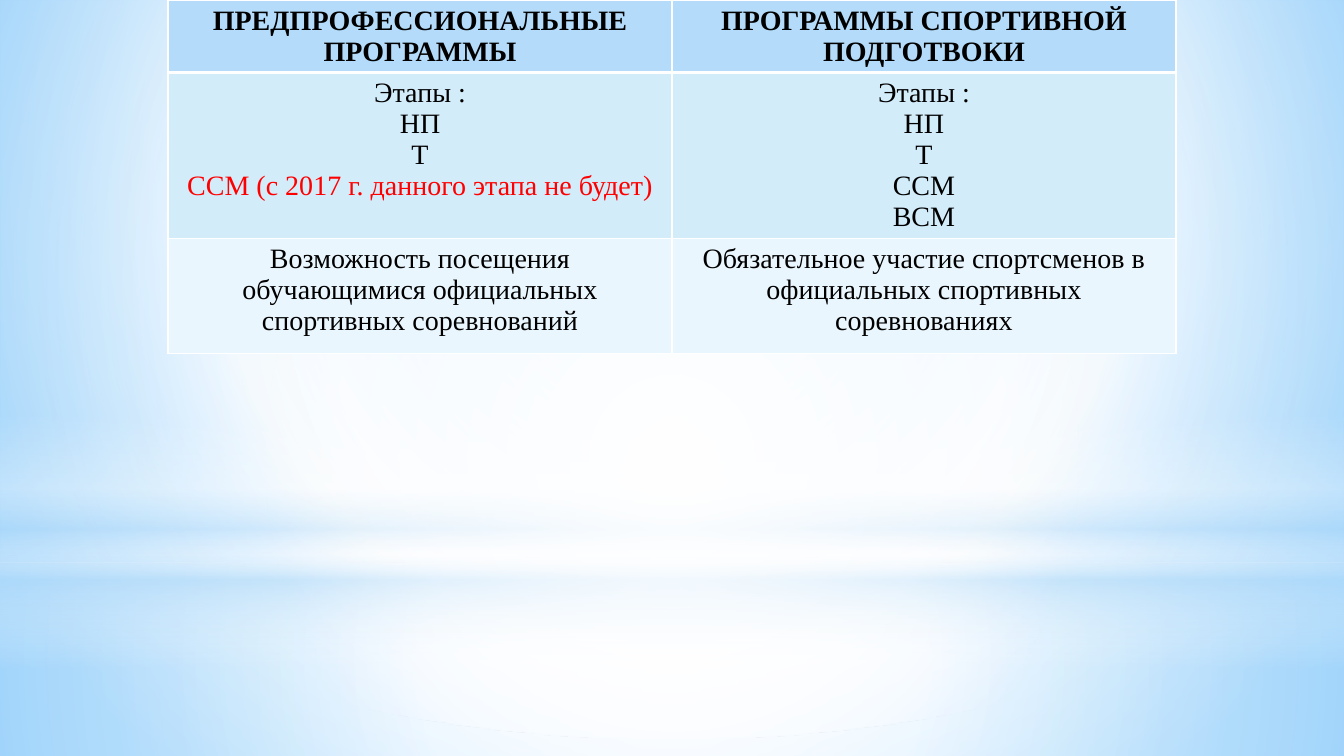
import pptx
import pptx.util
import pptx.dml.color
import pptx.enum.shapes
import pptx.enum.text
import pptx.oxml
import pptx.oxml.ns
from lxml import etree

Cm, Pt = pptx.util.Cm, pptx.util.Pt
RGBColor = pptx.dml.color.RGBColor
SHAPE = pptx.enum.shapes.MSO_SHAPE
qn = pptx.oxml.ns.qn

BLACK = RGBColor(0x00, 0x00, 0x00)
RED = RGBColor(0xFF, 0x00, 0x00)
WHITE = RGBColor(0xFF, 0xFF, 0xFF)
SKY = RGBColor(0x9E, 0xD5, 0xFF)
AZURE = RGBColor(0x5B, 0xB9, 0xFF)
PALE_BLUE = RGBColor(0xB4, 0xDC, 0xFA)
BAND_DARK = RGBColor(0xD2, 0xEC, 0xFA)
BAND_LIGHT = RGBColor(0xEA, 0xF6, 0xFD)

# Content: one row per entry, one list of lines per cell
ROWS = [
    [["ПРЕДПРОФЕССИОНАЛЬНЫЕ ПРОГРАММЫ"],
     ["ПРОГРАММЫ СПОРТИВНОЙ ПОДГОТВОКИ"]],
    [["Этапы :", "НП", "Т", "ССМ (с 2017 г. данного этапа не будет)"],
     ["Этапы :", "НП", "Т", "ССМ", "ВСМ"]],
    [["Возможность посещения обучающимися официальных спортивных соревнований"],
     ["Обязательное участие спортсменов в официальных спортивных соревнованиях"]],
]
RED_LINE = "ССМ (с 2017 г. данного этапа не будет)"
ROW_FILLS = [PALE_BLUE, BAND_DARK, BAND_LIGHT]
ROW_HEIGHTS = [1.65, 3.5, 2.9]
COLUMN_WIDTH = 12.7
WIDTH, HEIGHT = 33.87, 19.05

# Gradients: stops are (position %, colour, opacity %), focus is left, top, right, bottom %
BACKDROP = [(0, SKY, 100), (60, WHITE, 100), (100, AZURE, 100)]
BACKDROP_FOCUS = (20, 10, 20, 60)
CENTRE = (50, 50, 50, 50)
HORIZON = 14.17
# Light layers: shape, top, height, stops, focus (None means top to bottom)
LIGHTS = [
    (SHAPE.RECTANGLE, HORIZON, HEIGHT - HORIZON,
     [(0, WHITE, 91), (37, WHITE, 76), (100, PALE_BLUE, 79)], CENTRE),
    (SHAPE.RECTANGLE, 0, HORIZON,
     [(0, WHITE, 89), (48, WHITE, 62), (100, PALE_BLUE, 79)], CENTRE),
    (SHAPE.RECTANGLE, 10.46, 6.35,
     [(0, WHITE, 0), (29, WHITE, 30), (45, PALE_BLUE, 40),
      (55, WHITE, 26), (65, PALE_BLUE, 60), (100, WHITE, 0)], None),
    (SHAPE.OVAL, 4.45, HORIZON, [(0, WHITE, 100), (56, WHITE, 0)], CENTRE),
]


def set_gradient(fill, owner, stops, focus):
    """Give the owner element a gradient with transparent stops."""
    fill.gradient()
    gradient = next(owner.iter(qn("a:gradFill")))
    for child in list(gradient):
        gradient.remove(child)
    stop_list = etree.SubElement(gradient, qn("a:gsLst"))
    for position, colour, opacity in stops:
        stop = etree.SubElement(stop_list, qn("a:gs"), pos=str(position * 1000))
        tint = etree.SubElement(stop, qn("a:srgbClr"), val=str(colour))
        if opacity < 100:
            etree.SubElement(tint, qn("a:alpha"), val=str(opacity * 1000))
    if focus:
        route = etree.SubElement(gradient, qn("a:path"), path="circle")
        sides = {side: str(share * 1000) for side, share in zip("ltrb", focus)}
        etree.SubElement(route, qn("a:fillToRect"), **sides)
    else:
        etree.SubElement(gradient, qn("a:lin"), ang="5400000", scaled="0")


def set_borders(cell, widths):
    """Draw white borders; widths in points for left, right, top, bottom."""
    properties = cell._tc.get_or_add_tcPr()
    for index, (side, width) in enumerate(zip("LRTB", widths)):
        line = pptx.oxml.parse_xml(
            f'<a:ln{side} {pptx.oxml.ns.nsdecls("a")} w="{Pt(width)}"><a:solidFill>'
            f'<a:srgbClr val="{WHITE}"/></a:solidFill></a:ln{side}>')
        properties.insert(index, line)


def write_lines(cell, lines, bold):
    cell.text_frame.text = "\n".join(lines)
    for para in cell.text_frame.paragraphs:
        para.alignment = pptx.enum.text.PP_ALIGN.CENTER
        for span in para.runs:
            span.font.name = "Times New Roman"
            span.font.size = Pt(20)
            span.font.bold = bold
            span.font.color.rgb = RED if span.text == RED_LINE else BLACK


def main():
    deck = pptx.Presentation()
    deck.slide_width, deck.slide_height = Cm(WIDTH), Cm(HEIGHT)
    page = deck.slides.add_slide(deck.slide_layouts[6])

    # Background and light layers
    set_gradient(page.background.fill, page.element, BACKDROP, BACKDROP_FOCUS)
    for kind, top, height, stops, focus in LIGHTS:
        light = page.shapes.add_shape(kind, 0, Cm(top), Cm(WIDTH), Cm(height))
        light.shadow.inherit = False
        light.line.fill.background()
        set_gradient(light.fill, light.element.spPr, stops, focus)

    # Comparison table, centred at the top edge
    columns = len(ROWS[0])
    table_width = columns * COLUMN_WIDTH
    table = page.shapes.add_table(
        len(ROWS), columns, Cm((WIDTH - table_width) / 2), 0,
        Cm(table_width), Cm(sum(ROW_HEIGHTS))).table
    for column in table.columns:
        column.width = Cm(COLUMN_WIDTH)
    for r, row in enumerate(ROWS):
        table.rows[r].height = Cm(ROW_HEIGHTS[r])
        for c, lines in enumerate(row):
            cell = table.cell(r, c)
            cell.margin_left = cell.margin_right = Cm(0.18)
            cell.margin_top = cell.margin_bottom = Cm(0.13)
            cell.fill.solid()
            cell.fill.fore_color.rgb = ROW_FILLS[r]
            set_borders(cell, (1, 1, 3 if r == 1 else 1, 3 if r == 0 else 1))
            write_lines(cell, lines, bold=r == 0)

    deck.save("out.pptx")


if __name__ == "__main__":
    main()
